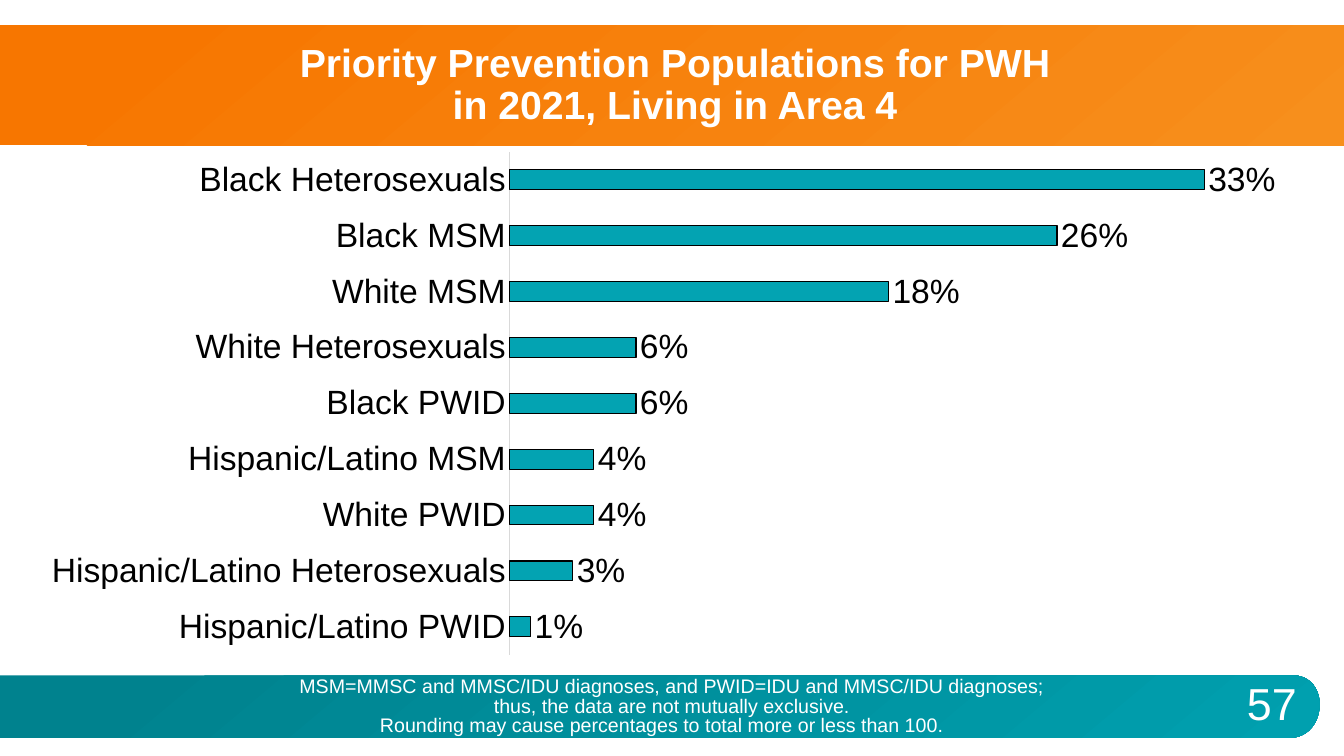
from dataclasses import dataclass

from lxml import etree
from pptx import Presentation
from pptx.chart.data import CategoryChartData
from pptx.dml.color import RGBColor
from pptx.enum.chart import XL_CHART_TYPE, XL_LABEL_POSITION, XL_TICK_LABEL_POSITION, XL_TICK_MARK
from pptx.enum.shapes import MSO_SHAPE
from pptx.enum.text import MSO_ANCHOR, PP_ALIGN
from pptx.oxml.ns import qn
from pptx.util import Inches, Pt

BAR = XL_CHART_TYPE.BAR_CLUSTERED
OUT_END = XL_LABEL_POSITION.OUTSIDE_END
NO_LABELS = XL_TICK_LABEL_POSITION.NONE
NO_TICK = XL_TICK_MARK.NONE
RECT = MSO_SHAPE.RECTANGLE
TOP, MIDDLE = MSO_ANCHOR.TOP, MSO_ANCHOR.MIDDLE
CENTER = PP_ALIGN.CENTER


@dataclass(frozen=True)
class Theme:
    font: str = "Arial"
    white: str = "FFFFFF"
    black: str = "000000"
    axis: str = "D9D9D9"
    bar: str = "03A3B2"
    orange: tuple = ("F77600", "F78F1C")
    teal: tuple = ("00828E", "00A0AF")
    title: int = 28
    label: int = 24
    number: int = 32
    note: int = 14


THEME = Theme()
SHARES = {
    "Black Heterosexuals": 33,
    "Black MSM": 26,
    "White MSM": 18,
    "White Heterosexuals": 6,
    "Black PWID": 6,
    "Hispanic/Latino MSM": 4,
    "White PWID": 4,
    "Hispanic/Latino Heterosexuals": 3,
    "Hispanic/Latino PWID": 1,
}


def rgb(code):
    return RGBColor.from_string(code)


def shade(shape, colors):
    """Fill a band with a diagonal gradient and no outline."""
    shape.shadow.inherit = False
    shape.line.fill.background()
    shape.fill.gradient()
    shape.fill.gradient_angle = 310
    for stop, color, place in zip(shape.fill.gradient_stops, colors, (0.09, 1)):
        stop.color.rgb = rgb(color)
        stop.position = place


def set_font(font, size, color):
    font.name = THEME.font
    font.size = Pt(size)
    font.color.rgb = rgb(color)


def add_text(slide, box, paras, size, anchor=MIDDLE, space=1.0, bold=False):
    """Add centred white text; each paragraph is a list of lines."""
    frame = slide.shapes.add_textbox(*map(Inches, box)).text_frame
    frame.word_wrap = True
    frame.vertical_anchor = anchor
    for i, lines in enumerate(paras):
        para = frame.add_paragraph() if i else frame.paragraphs[0]
        para.alignment = CENTER
        para.line_spacing = space
        for j, line in enumerate(lines):
            if j:
                para.add_line_break()
            run = para.add_run()
            run.text = line
            set_font(run.font, size, THEME.white)
            run.font.bold = bold


def add_header(slide, box):
    left, top, width, height = box
    shade(slide.shapes.add_shape(RECT, *map(Inches, box)), THEME.orange)
    lines = ["Priority Prevention Populations for PWH", "in 2021, Living in Area 4"]
    add_text(slide, (left + 0.74, top + 0.01, width - 1.42, height - 0.01),
             [lines], THEME.title, space=0.9, bold=True)


def add_band(slide, box):
    """Draw the footer band, whose right end is a sampled Bezier curve."""
    left, top, width, height = box
    right, low = left + width, top + height
    curve = [(right - 0.29, top), (right + 0.11, top - 0.02),
             (right + 0.08, low - 0.01), (right - 0.29, low)]
    points = []
    for step in range(25):
        t = step / 24
        parts = ((1 - t) ** 3, 3 * t * (1 - t) ** 2, 3 * t * t * (1 - t), t ** 3)
        points.append(tuple(Inches(sum(p * c[k] for p, c in zip(parts, curve)))
                            for k in (0, 1)))
    points += [(Inches(left), Inches(low)), (Inches(left), Inches(top))]
    pen = slide.shapes.build_freeform(*points[0])
    pen.add_line_segments(points[1:], close=True)
    shade(pen.convert_to_shape(), THEME.teal)


def add_footer(slide, box):
    left, top, width, height = box
    add_band(slide, box)
    add_text(slide, (left + 12.07, top - 0.02, 1.09, 0.59), [["57"]], THEME.number)
    add_text(slide, (left + 0.23, top - 0.03, 12.87, 0.5), [
        ["MSM=MMSC and MMSC/IDU diagnoses, and PWID=IDU and MMSC/IDU diagnoses;"],
        ["thus, the data are not mutually exclusive."],
    ], THEME.note, TOP, 0.85)
    add_text(slide, (left + 1.1, top + 0.32, 10.93, 0.34),
             [["Rounding may cause percentages to total more or less than 100."]],
             THEME.note, TOP)


def fix_plot(chart, area):
    """Pin the inner plot area to fractions of the chart."""
    plot = chart.plots[0]._element.getparent()
    for old in plot.findall(qn("c:layout")):
        plot.remove(old)
    layout = etree.Element(qn("c:layout"))
    plot.insert(0, layout)
    manual = etree.SubElement(layout, qn("c:manualLayout"))
    items = [("layoutTarget", "inner"), ("xMode", "edge"), ("yMode", "edge")]
    items += zip("xywh", area)
    for tag, val in items:
        etree.SubElement(manual, qn("c:" + tag)).set("val", str(val))


def add_bars(slide, box):
    data = CategoryChartData()
    data.categories = list(SHARES)
    data.add_series("Series 1", list(SHARES.values()))
    chart = slide.shapes.add_chart(BAR, *map(Inches, box), data).chart
    set_font(chart.font, THEME.label, THEME.black)
    chart.has_legend = False
    chart.has_title = False
    fix_plot(chart, (0.383, 0.007, 0.575, 0.936))

    cats, vals = chart.category_axis, chart.value_axis
    for axis in (cats, vals):
        axis.major_tick_mark = axis.minor_tick_mark = NO_TICK
        axis.has_major_gridlines = False
    cats.reverse_order = True
    set_font(cats.tick_labels.font, THEME.label, THEME.black)
    cats.format.line.color.rgb = rgb(THEME.axis)
    cats.format.line.width = Pt(0.75)
    vals.minimum_scale, vals.maximum_scale = 0, 34.7
    vals.tick_label_position = NO_LABELS
    vals.format.line.fill.background()

    plot = chart.plots[0]
    plot.gap_width = 182
    plot.vary_by_categories = False
    bars = plot.series[0]
    bars.format.fill.solid()
    bars.format.fill.fore_color.rgb = rgb(THEME.bar)
    bars.format.line.color.rgb = rgb(THEME.black)
    bars.format.line.width = Pt(0.75)
    labels = bars.data_labels
    labels.show_value = True
    labels.position = OUT_END
    labels.number_format = "0\\%"
    labels.number_format_is_linked = False
    set_font(labels.font, THEME.label, THEME.black)


def main():
    deck = Presentation()
    deck.slide_width, deck.slide_height = Inches(13.33), Inches(7.5)
    slide = deck.slides.add_slide(deck.slide_layouts[6])
    add_footer(slide, (0, 6.7, 13.09, 0.62))
    add_header(slide, (0, 0.25, 13.33, 1.19))
    add_bars(slide, (0.23, 1.47, 12.6, 5.33))
    deck.save("out.pptx")


if __name__ == "__main__":
    main()
